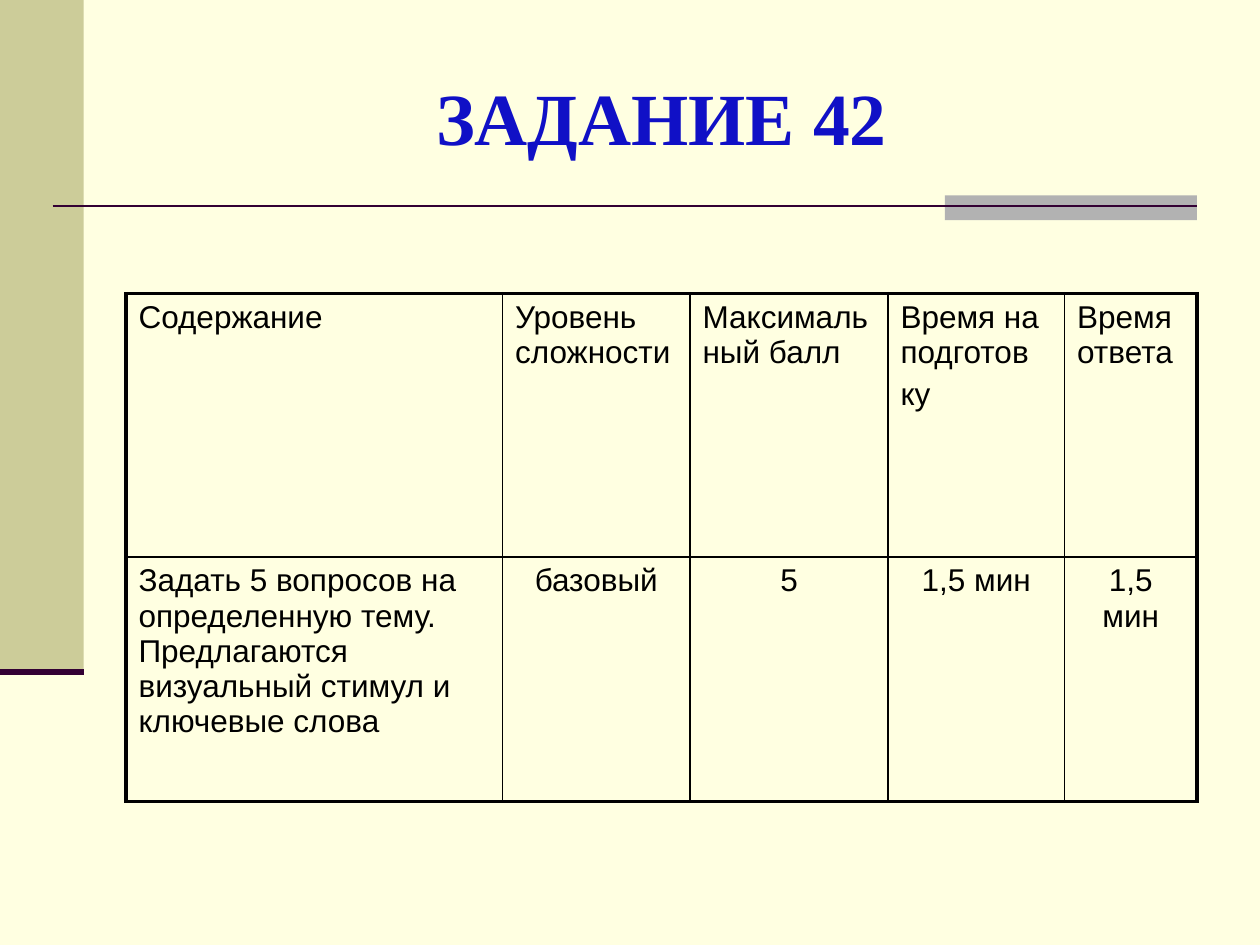
from dataclasses import dataclass

from lxml.etree import SubElement
from pptx import Presentation
from pptx.dml.color import RGBColor
from pptx.enum.shapes import MSO_CONNECTOR as Connector, MSO_SHAPE as Preset
from pptx.enum.text import MSO_ANCHOR as Anchor, PP_ALIGN as Align
from pptx.oxml import parse_xml
from pptx.oxml.ns import nsdecls, qn
from pptx.slide import Slide
from pptx.table import _Cell as Cell
from pptx.util import Cm, Pt

BACKGROUND, PLUM, BLACK = "FFFFE1", "330033", "000000"
THIN, THICK = 1, 2.25

COLUMN_WIDTHS = [7.59, 3.78, 3.99, 3.56, 2.67]
ROW_HEIGHTS = [5.31, 4.93]
# Each cell is a list of paragraphs
TABLE_ROWS = [
    [["Содержание"], ["Уровень сложности"], ["Максимальный балл"],
     ["Время на подготов", "ку"], ["Время ответа"]],
    [["Задать 5 вопросов на определенную тему. Предлагаются визуальный стимул и ключевые слова"],
     ["базовый"], ["5"], ["1,5 мин"], ["1,5 мин"]],
]


@dataclass
class Block:
    left: float
    top: float
    width: float
    height: float
    color: str


@dataclass
class Rule:
    left: float
    right: float
    y: float
    weight: float


BLOCKS = [Block(0, 0, 1.69, 13.55, "CCCC99"), Block(19.05, 3.94, 5.08, 0.5, "B2B2B2")]
RULES = [Rule(1.06, 24.13, 4.15, 1.5), Rule(0, 1.69, 13.55, 3.5)]


def rgb(color: str) -> RGBColor:
    return RGBColor.from_string(color)


def draw_block(slide: Slide, block: Block) -> None:
    shape = slide.shapes.add_shape(Preset.RECTANGLE, Cm(block.left), Cm(block.top),
                                   Cm(block.width), Cm(block.height))
    shape.shadow.inherit = False
    shape.fill.solid()
    shape.fill.fore_color.rgb = rgb(block.color)
    shape.line.fill.background()


def draw_rule(slide: Slide, rule: Rule) -> None:
    line = slide.shapes.add_connector(Connector.STRAIGHT, Cm(rule.left), Cm(rule.y),
                                      Cm(rule.right), Cm(rule.y))
    line.line.color.rgb = rgb(PLUM)
    line.line.width = Pt(rule.weight)
    SubElement(line._element.spPr, qn("a:effectLst"))


def add_run(paragraph, text: str, font: str, size: float, color: str, bold: bool = False) -> None:
    run = paragraph.add_run()
    run.text = text
    run.font.name = font
    run.font.size = Pt(size)
    run.font.bold = bold
    run.font.color.rgb = rgb(color)


def draw_title(slide: Slide, text: str) -> None:
    frame = slide.shapes.add_textbox(Cm(2.54), Cm(0.76), Cm(21.59), Cm(3.18)).text_frame
    frame.word_wrap = True
    frame.vertical_anchor = Anchor.MIDDLE
    paragraph = frame.paragraphs[0]
    paragraph.alignment = Align.CENTER
    add_run(paragraph, text, "Times New Roman", 42, "1010C6", bold=True)


def set_borders(cell: Cell, weights: dict[str, float]) -> None:
    properties = cell._tc.get_or_add_tcPr()
    for position, (side, weight) in enumerate(weights.items()):
        properties.insert(position, parse_xml(
            f'<a:ln{side} {nsdecls("a")} w="{Pt(weight)}"><a:solidFill>'
            f'<a:srgbClr val="{BLACK}"/></a:solidFill></a:ln{side}>'))


def fill_cell(cell: Cell, texts: list[str], alignment: Align) -> None:
    cell.fill.background()
    frame = cell.text_frame
    for index, text in enumerate(texts):
        paragraph = frame.add_paragraph() if index else frame.paragraphs[0]
        paragraph.alignment = alignment
        paragraph.space_before = Pt(3.6)
        add_run(paragraph, text, "Arial", 18, BLACK)


def draw_table(slide: Slide) -> None:
    last_row, last_column = len(ROW_HEIGHTS) - 1, len(COLUMN_WIDTHS) - 1
    table = slide.shapes.add_table(last_row + 1, last_column + 1, Cm(2.54), Cm(5.92),
                                   Cm(sum(COLUMN_WIDTHS)), Cm(sum(ROW_HEIGHTS))).table
    table.first_row = table.horz_banding = False
    for column, width in zip(table.columns, COLUMN_WIDTHS):
        column.width = Cm(width)
    for row, height in zip(table.rows, ROW_HEIGHTS):
        row.height = Cm(height)

    for r, row_texts in enumerate(TABLE_ROWS):
        for c, texts in enumerate(row_texts):
            cell = table.cell(r, c)
            fill_cell(cell, texts, Align.CENTER if r and c else Align.LEFT)
            # The outer frame is thick, the inner lines are thin
            outer = {"L": c == 0, "R": c == last_column, "T": r == 0, "B": r == last_row}
            set_borders(cell, {side: THICK if edge else THIN for side, edge in outer.items()})


def main() -> None:
    presentation = Presentation()
    presentation.slide_width, presentation.slide_height = Cm(25.4), Cm(19.05)
    slide = presentation.slides.add_slide(presentation.slide_layouts[6])
    slide.background.fill.solid()
    slide.background.fill.fore_color.rgb = rgb(BACKGROUND)

    # Side band, accent and rules
    for block in BLOCKS:
        draw_block(slide, block)
    for rule in RULES:
        draw_rule(slide, rule)

    # Content
    draw_title(slide, "ЗАДАНИЕ 42")
    draw_table(slide)
    presentation.save("out.pptx")


if __name__ == "__main__":
    main()
